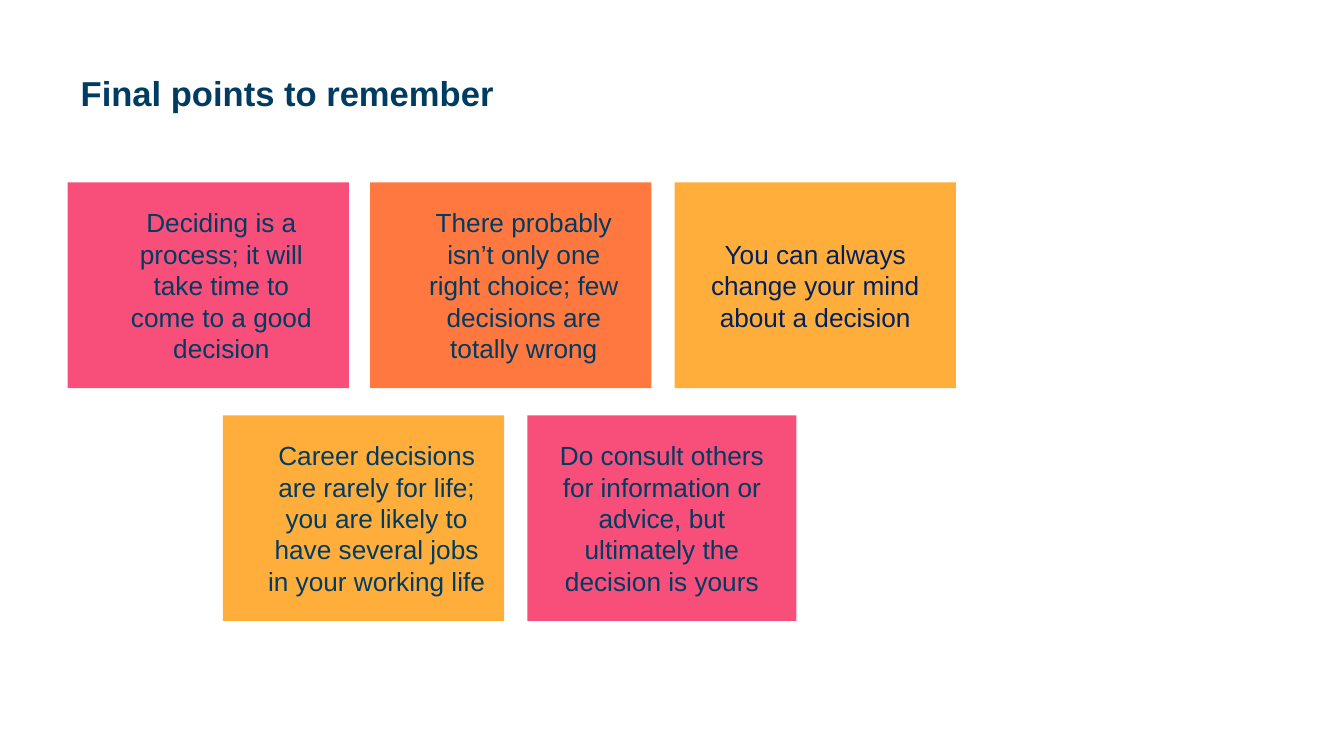
"""Builds the closing slide with five points to remember."""
import pptx
import pptx.dml.color
import pptx.enum.shapes
import pptx.enum.text
import pptx.util

Inches = pptx.util.Inches
COLORS = {
    "navy": "003B61",
    "dark blue": "002060",
    "pink": "F74F79",
    "orange": "FF7840",
    "amber": "FFAE3B",
}
CARD_HEIGHT = 2.04
TOP_ROW, BOTTOM_ROW = 1.81, 4.12
POINTS = [
    (0.67, TOP_ROW, 2.79, "pink", "navy", (0.5, 0.24),
     "Deciding is a process; it will take time to come to a good decision"),
    (3.67, TOP_ROW, 2.79, "orange", "navy", (0.5, 0.24),
     "There probably isn’t only one right choice; few decisions are totally wrong"),
    (6.69, TOP_ROW, 2.79, "amber", "dark blue", (0.24, 0.24),
     "You can always change your mind about a decision"),
    (2.21, BOTTOM_ROW, 2.79, "amber", "navy", (0.44, 0.18),
     "Career decisions are rarely for life; you are likely to have several jobs "
     "in your working life"),
    (5.23, BOTTOM_ROW, 2.67, "pink", "navy", (0.18, 0.18),
     "Do consult others for information or advice, but ultimately the decision is yours"),
]


def rgb(color):
    return pptx.dml.color.RGBColor.from_string(COLORS[color])


def write(frame, text, size, color, align, insets, bold=False):
    frame.word_wrap = True
    frame.auto_size = pptx.enum.text.MSO_AUTO_SIZE.NONE
    frame.vertical_anchor = pptx.enum.text.MSO_ANCHOR.MIDDLE
    left, top, right, bottom = (Inches(inset) for inset in insets)
    frame.margin_left, frame.margin_right = left, right
    frame.margin_top, frame.margin_bottom = top, bottom
    paragraph = frame.paragraphs[0]
    paragraph.alignment = align
    run = paragraph.add_run()
    run.text = text
    run.font.name = "Arial"
    run.font.size = pptx.util.Pt(size)
    run.font.bold = bold
    run.font.color.rgb = rgb(color)


def set_heading(slide, text):
    heading = slide.shapes.title
    heading.left, heading.top = Inches(0.67), Inches(0.29)
    heading.width, heading.height = Inches(12), Inches(1.25)
    write(heading.text_frame, text, 24.7, "navy", pptx.enum.text.PP_ALIGN.LEFT,
          (0.13, 0.07, 0.13, 0.07), bold=True)


def add_card(slide, left, top, width, fill, ink, side_insets, text):
    card = slide.shapes.add_shape(
        pptx.enum.shapes.MSO_SHAPE.RECTANGLE,
        Inches(left), Inches(top), Inches(width), Inches(CARD_HEIGHT))
    card.shadow.inherit = False
    card.fill.solid()
    card.fill.fore_color.rgb = rgb(fill)
    card.line.fill.background()
    left_inset, right_inset = side_insets
    write(card.text_frame, text, 18.7, ink, pptx.enum.text.PP_ALIGN.CENTER,
          (left_inset, 0.15, right_inset, 0.15))


def main():
    deck = pptx.Presentation()
    deck.slide_width, deck.slide_height = Inches(13.33), Inches(7.5)
    slide = deck.slides.add_slide(deck.slide_layouts[5])
    set_heading(slide, "Final points to remember")
    for point in POINTS:
        add_card(slide, *point)
    deck.save("out.pptx")


if __name__ == "__main__":
    main()
